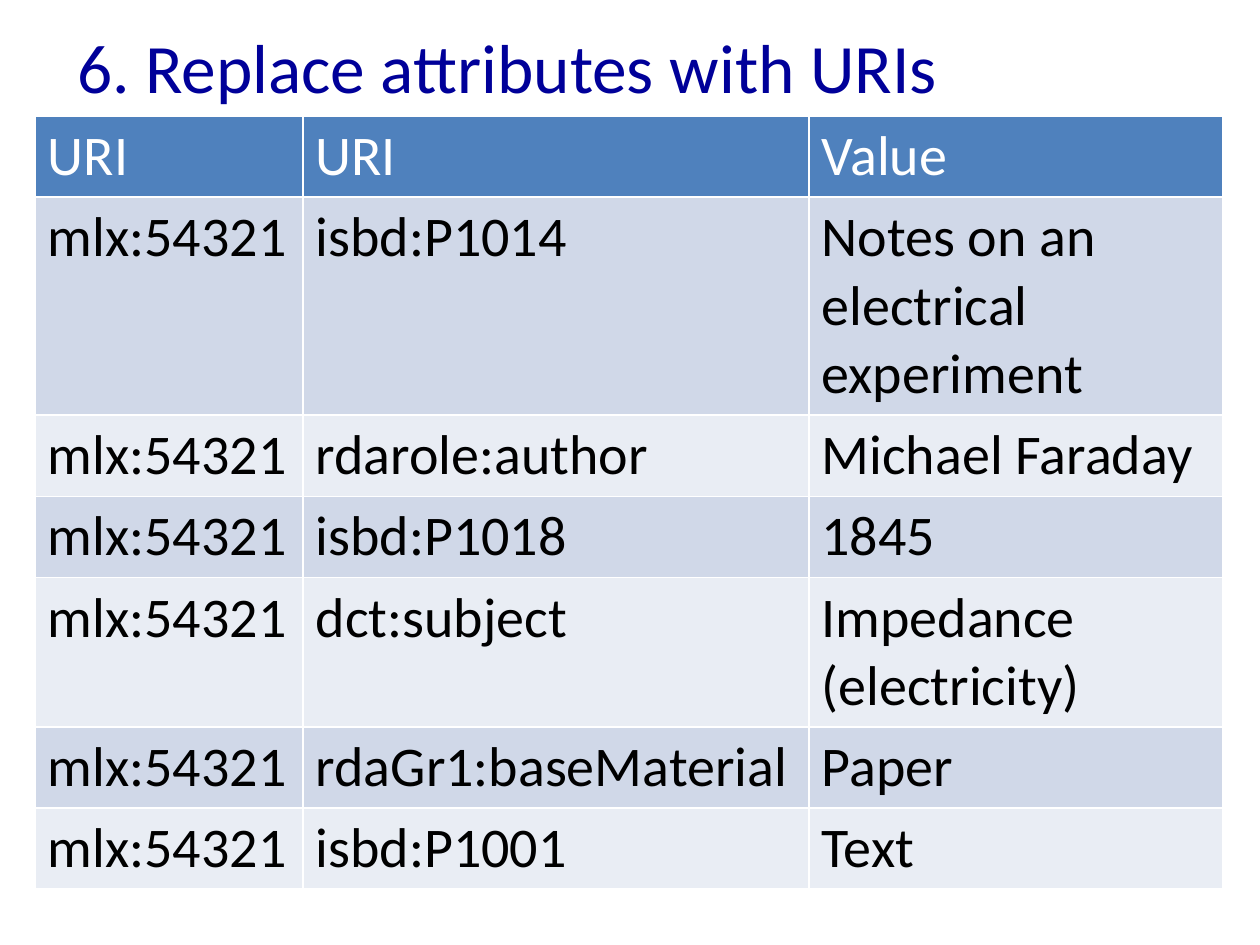
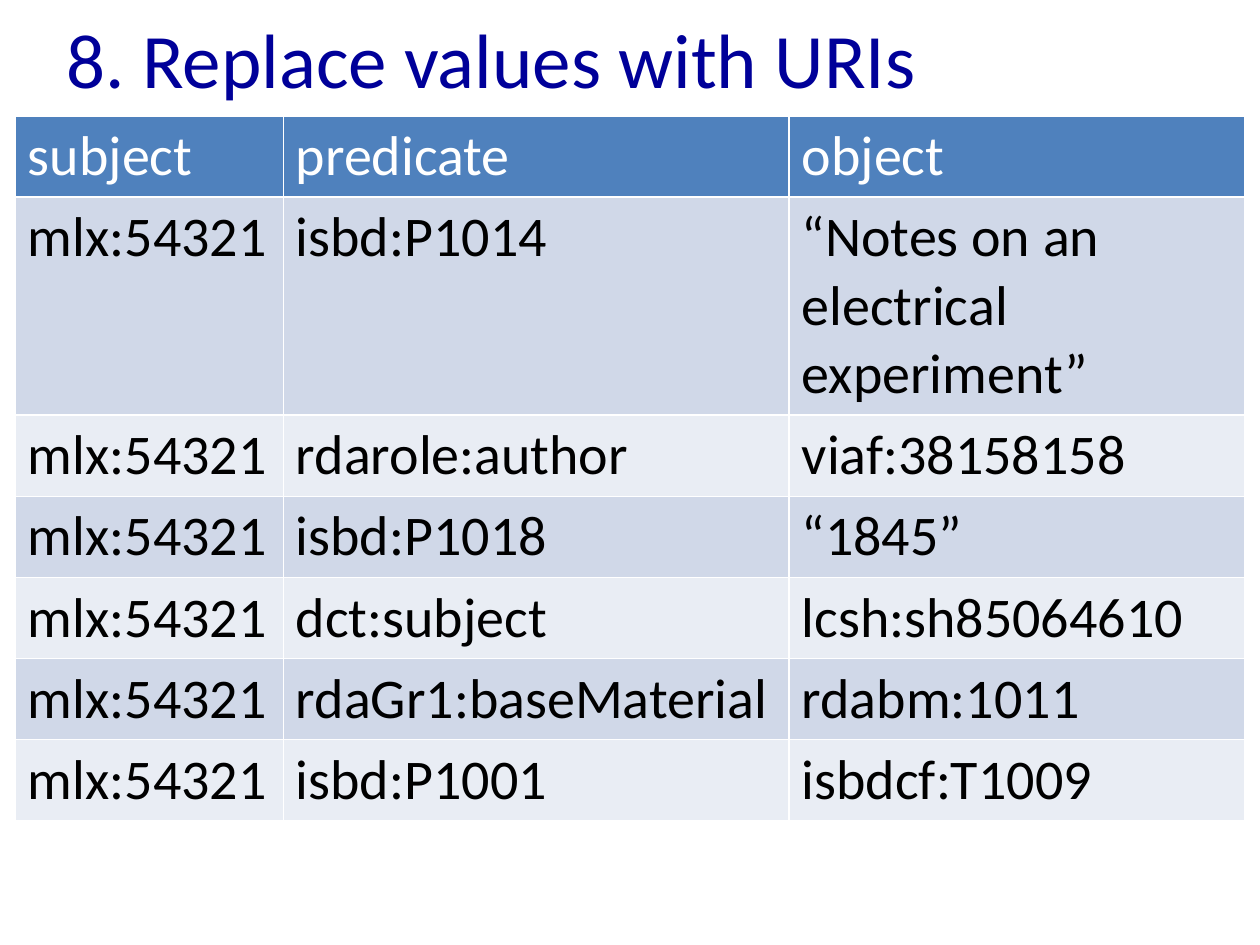
"""Build two slides that turn a catalogue record into URI triples."""
from dataclasses import dataclass

from pptx import Presentation
from pptx.dml.color import RGBColor as RGB
from pptx.enum.text import MSO_ANCHOR as Anchor, MSO_AUTO_SIZE as AutoSize, PP_ALIGN as Align
from pptx.slide import Slide
from pptx.text.text import TextFrame
from pptx.util import Cm, Pt


@dataclass(frozen=True)
class Theme:
    font: str = "Calibri"
    title: RGB = RGB(0x00, 0x00, 0x99)
    header: RGB = RGB(0x4F, 0x81, 0xBD)
    header_text: RGB = RGB(0xFF, 0xFF, 0xFF)
    bands: tuple[RGB, RGB] = (RGB(0xD0, 0xD8, 0xE8), RGB(0xE9, 0xED, 0xF4))
    body_text: RGB = RGB(0x00, 0x00, 0x00)
    cell_size: float = 32


@dataclass(frozen=True)
class Box:
    left: float
    top: float
    width: float
    height: float

    def lengths(self) -> tuple[Cm, Cm, Cm, Cm]:
        return Cm(self.left), Cm(self.top), Cm(self.width), Cm(self.height)


@dataclass(frozen=True)
class TripleSlide:
    title: str
    title_size: float
    title_box: Box
    table_box: Box
    header: tuple[str, str, str]
    values: tuple[str, ...]


THEME = Theme()
SUBJECT = "mlx:54321"
PREDICATES = ("isbd:P1014", "rdarole:author", "isbd:P1018",
              "dct:subject", "rdaGr1:baseMaterial", "isbd:P1001")
SUBJECT_WIDTH, PREDICATE_WIDTH, ROW_HEIGHT = 5.4, 10.2, 1.03

SLIDES = (
    TripleSlide(
        "6. Replace attributes with URIs", 39.6,
        Box(1.3, 0.33, 22.86, 2), Box(0.71, 2.34, 23.93, 15.32),
        ("URI", "URI", "Value"),
        ("Notes on an electrical experiment", "Michael Faraday", "1845",
         "Impedance (electricity)", "Paper", "Text")),
    TripleSlide(
        "8. Replace values with URIs", 44,
        Box(1.09, 0, 22.86, 2.34), Box(0.31, 2.34, 24.79, 13.97),
        ("subject", "predicate", "object"),
        ("“Notes on an electrical experiment”", "viaf:38158158", "“1845”",
         "lcsh:sh85064610", "rdabm:1011", "isbdcf:T1009")),
)


def add_text(tf: TextFrame, text: str, size: float, color: RGB) -> None:
    p = tf.paragraphs[0]
    p.alignment = Align.LEFT
    r = p.add_run()
    r.text = text
    r.font.name = THEME.font
    r.font.size = Pt(size)
    r.font.bold = False
    r.font.color.rgb = color


def add_title(s: Slide, spec: TripleSlide) -> None:
    sp = s.shapes.title
    sp.left, sp.top, sp.width, sp.height = spec.title_box.lengths()
    tf = sp.text_frame
    tf.auto_size = AutoSize.NONE
    tf.vertical_anchor = Anchor.MIDDLE
    add_text(tf, spec.title, spec.title_size, THEME.title)


def add_triples(s: Slide, spec: TripleSlide) -> None:
    rows = [spec.header] + [(SUBJECT, predicate, value)
                            for predicate, value in zip(PREDICATES, spec.values)]
    frame = s.shapes.add_table(len(rows), len(spec.header), *spec.table_box.lengths())
    table = frame.table
    value_width = spec.table_box.width - SUBJECT_WIDTH - PREDICATE_WIDTH
    for column, width in zip(table.columns, (SUBJECT_WIDTH, PREDICATE_WIDTH, value_width)):
        column.width = Cm(width)
    for i, texts in enumerate(rows):
        table.rows[i].height = Cm(ROW_HEIGHT)
        fill = THEME.bands[(i - 1) % 2] if i else THEME.header
        color = THEME.body_text if i else THEME.header_text
        for cell, text in zip(table.rows[i].cells, texts):
            cell.fill.solid()
            cell.fill.fore_color.rgb = fill
            add_text(cell.text_frame, text, THEME.cell_size, color)
    frame.height = Cm(spec.table_box.height)


def main() -> None:
    prs = Presentation()
    prs.slide_width, prs.slide_height = Cm(25.4), Cm(19.05)
    title_only = prs.slide_layouts.get_by_name("Title Only")
    for spec in SLIDES:
        s = prs.slides.add_slide(title_only)
        add_title(s, spec)
        add_triples(s, spec)
    prs.save("out.pptx")


if __name__ == "__main__":
    main()
